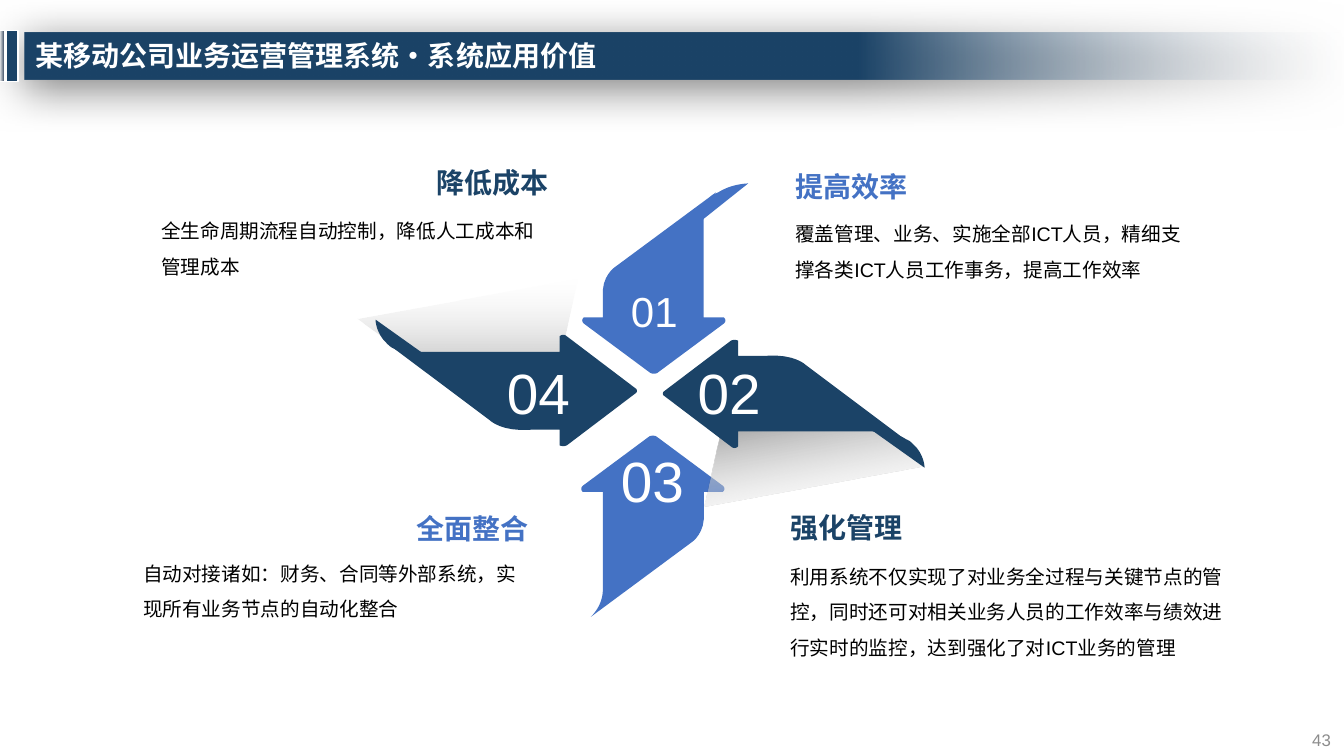
import pptx
import pptx.dml.color
import pptx.enum.shapes
import pptx.enum.text
import pptx.util
from dataclasses import dataclass
from lxml import etree
from pptx.util import Inches


@dataclass
class Theme:
    navy: str = "1B4367"
    blue: str = "4472C4"
    white: str = "FFFFFF"
    black: str = "000000"
    grey: str = "8C8C8C"
    latin: str = "Arial"
    chinese: str = "Noto Sans CJK SC"
    heading: float = 20
    body: float = 14
    small_number: float = 30
    large_number: float = 40.5
    page_number: float = 12


theme = Theme()
rgb = pptx.dml.color.RGBColor.from_string
ALIGN = pptx.enum.text.PP_ALIGN
ANCHOR = pptx.enum.text.MSO_ANCHOR
RECTANGLE = pptx.enum.shapes.MSO_SHAPE.RECTANGLE
A = "{http://schemas.openxmlformats.org/drawingml/2006/main}"


def paint(shape, fill, line=None):
    """Fill with one colour, or with (angle, [(position, colour, opacity), ...])."""
    shape.shadow.inherit = False
    if isinstance(fill, str):
        shape.fill.solid()
        shape.fill.fore_color.rgb = rgb(fill)
    else:
        angle, stops = fill
        shape.fill.gradient()
        shape.fill.gradient_angle = angle
        for stop, (position, colour, opacity) in zip(shape.fill.gradient_stops, stops):
            stop.position = position
            stop.color.rgb = rgb(colour)
        for node, (_, _, opacity) in zip(shape.element.spPr.iter(A + "srgbClr"), stops):
            if opacity < 100:
                etree.SubElement(node, A + "alpha", val=str(opacity * 1000))
    if line:
        shape.line.color.rgb = rgb(line)
        shape.line.width = pptx.util.Pt(1)
    else:
        shape.line.fill.background()


deck = pptx.Presentation()
deck.slide_width, deck.slide_height = Inches(13.33), Inches(7.5)
page = deck.slides.add_slide(deck.slide_layouts[6])

# Title bar with its soft shadow, and the two marks at its left
bar_fade = (180, [(0, "F6F8FC", 0), (0.37, theme.navy, 100)])
edge_fade = (0, [(0.12, "F2F2F2", 100), (0.87, "44546A", 100)])
for left, top, width, height, fill, line in [
    (0.24, 0.32, 13.11, 0.47, bar_fade, None),
    (0.06, 0.3, 0.12, 0.51, theme.navy, theme.white),
    (-0.01, 0.3, 0.06, 0.51, edge_fade, theme.white),
]:
    bar = page.shapes.add_shape(
        RECTANGLE, Inches(left), Inches(top), Inches(width), Inches(height))
    paint(bar, fill, line)
    if fill is bar_fade:
        shadow = etree.SubElement(
            bar.element.spPr.find(A + "effectLst"), A + "outerShdw",
            blurRad=str(pptx.util.Pt(31)), dist=str(pptx.util.Pt(6)),
            dir=str(97 * 60000), algn="t", rotWithShape="0")
        shade = etree.SubElement(shadow, A + "srgbClr", val=theme.black)
        etree.SubElement(shade, A + "alpha", val="50000")

# Outlines in inches: pairs are corners, sixes are Bezier curves
upright_arrow = [
    (5.79, 3.21), (6.45, 3.7), (6.47, 3.71, 6.5, 3.71, 6.52, 3.7), (7.18, 3.21),
    (7.2, 3.19, 7.2, 3.17, 7.18, 3.15), (6.98, 3.15), (6.98, 2.18),
    (6.98, 2.18, 6.98, 2.15, 6.99, 2.1), (7.01, 2.02, 7.05, 1.96, 7.1, 1.91),
    (6.1, 2.65), (6.1, 2.65, 5.96, 2.74, 5.98, 2.95), (5.98, 3.15), (5.79, 3.15),
    (5.77, 3.17, 5.77, 3.19, 5.79, 3.21)]
upright_fold = [
    (6.93, 2.21), (7.42, 1.82), (7.42, 1.82, 7.26, 1.82, 7.12, 1.91),
    (7.09, 1.92, 7.07, 1.93, 7.05, 1.95), (7, 2, 6.96, 2.06, 6.94, 2.15),
    (6.94, 2.17, 6.93, 2.19, 6.93, 2.21)]
side_arrow = [
    (7.25, 3.38), (6.59, 3.88), (6.57, 3.89, 6.57, 3.92, 6.59, 3.93), (7.25, 4.43),
    (7.27, 4.45, 7.3, 4.45, 7.32, 4.43), (7.32, 4.28), (8.63, 4.28),
    (8.63, 4.28, 8.67, 4.28, 8.73, 4.29), (8.85, 4.3, 8.93, 4.33, 8.99, 4.37),
    (7.99, 3.62), (7.99, 3.62, 7.88, 3.51, 7.6, 3.53), (7.32, 3.53), (7.32, 3.38),
    (7.3, 3.37, 7.27, 3.37, 7.25, 3.38)]
side_fold = [
    (8.65, 4.27), (9.17, 4.64), (9.17, 4.64, 9.17, 4.51, 9.06, 4.41),
    (9.04, 4.39, 9.02, 4.37, 8.99, 4.36), (8.93, 4.32, 8.84, 4.29, 8.73, 4.27),
    (8.71, 4.27, 8.68, 4.27, 8.65, 4.27)]
cast_shadow = [(9.17, 4.62), (8.61, 4.22), (7.24, 3.9), (6.99, 5.02)]

# Pinwheel: a half turn sends (x, y) to (sum_x - scale x, sum_y - scale y)
as_drawn = (0, 0, -1)
right_fade = (100, [(0.02, "F2F2F2", 0), (0.76, "A6A6A6", 100)])
left_fade = (90, [(0, "A6A6A6", 100), (1, "F2F2F2", 0)])
for outline, (sum_x, sum_y, scale), fill in [
    (upright_arrow, (12.96, 8.03, 1), theme.blue),
    (cast_shadow, as_drawn, right_fade),
    (cast_shadow, (12.72, 7.78, 1), left_fade),
    (side_fold, (13.17, 7.95, 1.03), theme.navy),
    (side_arrow, (13.09, 7.9, 1.03), theme.navy),
    (side_arrow, as_drawn, theme.navy),
    (side_fold, as_drawn, theme.navy),
    (upright_fold, as_drawn, theme.blue),
    (upright_arrow, as_drawn, theme.blue),
]:
    points = [outline[0]]
    for step in outline[1:]:
        if len(step) == 2:
            points.append(step)
            continue
        start = points[-1]
        for t in (k / 8 for k in range(1, 9)):
            points.append(tuple(
                (1 - t) ** 3 * start[i] + 3 * t * (1 - t) ** 2 * step[i]
                + 3 * t * t * (1 - t) * step[i + 2] + t ** 3 * step[i + 4]
                for i in (0, 1)))
    placed = [(Inches(sum_x - scale * x), Inches(sum_y - scale * y)) for x, y in points]
    builder = page.shapes.build_freeform(*placed[0])
    builder.add_line_segments(placed[1:], close=True)
    paint(builder.convert_to_shape(), fill)

# Text styles: size, bold, anchor, line spacing
title = (theme.heading, True, ANCHOR.MIDDLE, 0.9)
heading = (theme.heading, True, ANCHOR.BOTTOM, None)
body = (theme.body, False, ANCHOR.TOP, 1.5)
small_number = (theme.small_number, False, ANCHOR.MIDDLE, None)
large_number = (theme.large_number, False, ANCHOR.MIDDLE, None)
page_number = (theme.page_number, False, ANCHOR.MIDDLE, None)

# Title, page number, arrow numbers, and the four benefits
for left, top, width, height, text, style, colour, align in [
    (0.25, 0.34, 12.2, 0.46, "某移动公司业务运营管理系统·系统应用价值",
     title, theme.white, ALIGN.LEFT),
    (12.65, 7.17, 0.68, 0.34, "43", page_number, theme.grey, ALIGN.RIGHT),
    (6.16, 2.78, 0.83, 0.61, "01", small_number, theme.white, ALIGN.LEFT),
    (6.82, 3.5, 1.03, 0.78, "02", large_number, theme.white, ALIGN.LEFT),
    (6.06, 4.37, 1.03, 0.78, "03", large_number, theme.white, ALIGN.LEFT),
    (4.93, 3.5, 1.03, 0.78, "04", large_number, theme.white, ALIGN.LEFT),
    (7.79, 1.45, 3.94, 0.61, "提高效率", heading, theme.blue, ALIGN.LEFT),
    (7.79, 2.04, 4.2, 0.71, "覆盖管理、业务、实施全部ICT人员，精细支撑各类ICT人员工作事务，提高工作效率",
     body, theme.black, ALIGN.LEFT),
    (7.74, 4.84, 4.2, 0.61, "强化管理", heading, theme.navy, ALIGN.LEFT),
    (7.74, 5.44, 4.52, 0.96,
     "利用系统不仅实现了对业务全过程与关键节点的管控，同时还可对相关业务人员的工作效率与绩效进行实时的监控，达到强化了对ICT业务的管理",
     body, theme.black, ALIGN.LEFT),
    (1.5, 4.85, 3.84, 0.61, "全面整合", heading, theme.blue, ALIGN.RIGHT),
    (1.32, 5.41, 4.02, 0.71, "自动对接诸如：财务、合同等外部系统，实现所有业务节点的自动化整合",
     body, theme.black, ALIGN.LEFT),
    (1.6, 1.41, 3.94, 0.61, "降低成本", heading, theme.navy, ALIGN.RIGHT),
    (1.5, 2.01, 4.04, 0.71, "全生命周期流程自动控制，降低人工成本和管理成本",
     body, theme.black, ALIGN.LEFT),
]:
    size, bold, anchor, spacing = style
    box = page.shapes.add_textbox(Inches(left), Inches(top), Inches(width), Inches(height))
    frame = box.text_frame
    frame.word_wrap = True
    frame.vertical_anchor = anchor
    if style is page_number:
        frame.margin_left = frame.margin_right = Inches(0.13)
        frame.margin_top = frame.margin_bottom = Inches(0.07)
    frame.text = text
    para = frame.paragraphs[0]
    para.alignment = align
    para.line_spacing = spacing
    span = para.runs[0]
    span.font.size = pptx.util.Pt(size)
    span.font.bold = bold
    span.font.color.rgb = rgb(colour)
    span.font.name = theme.chinese if style is title else theme.latin
    east_asian = etree.Element(A + "ea", typeface=theme.chinese)
    span.font._element.find(A + "latin").addnext(east_asian)

deck.save("out.pptx")
